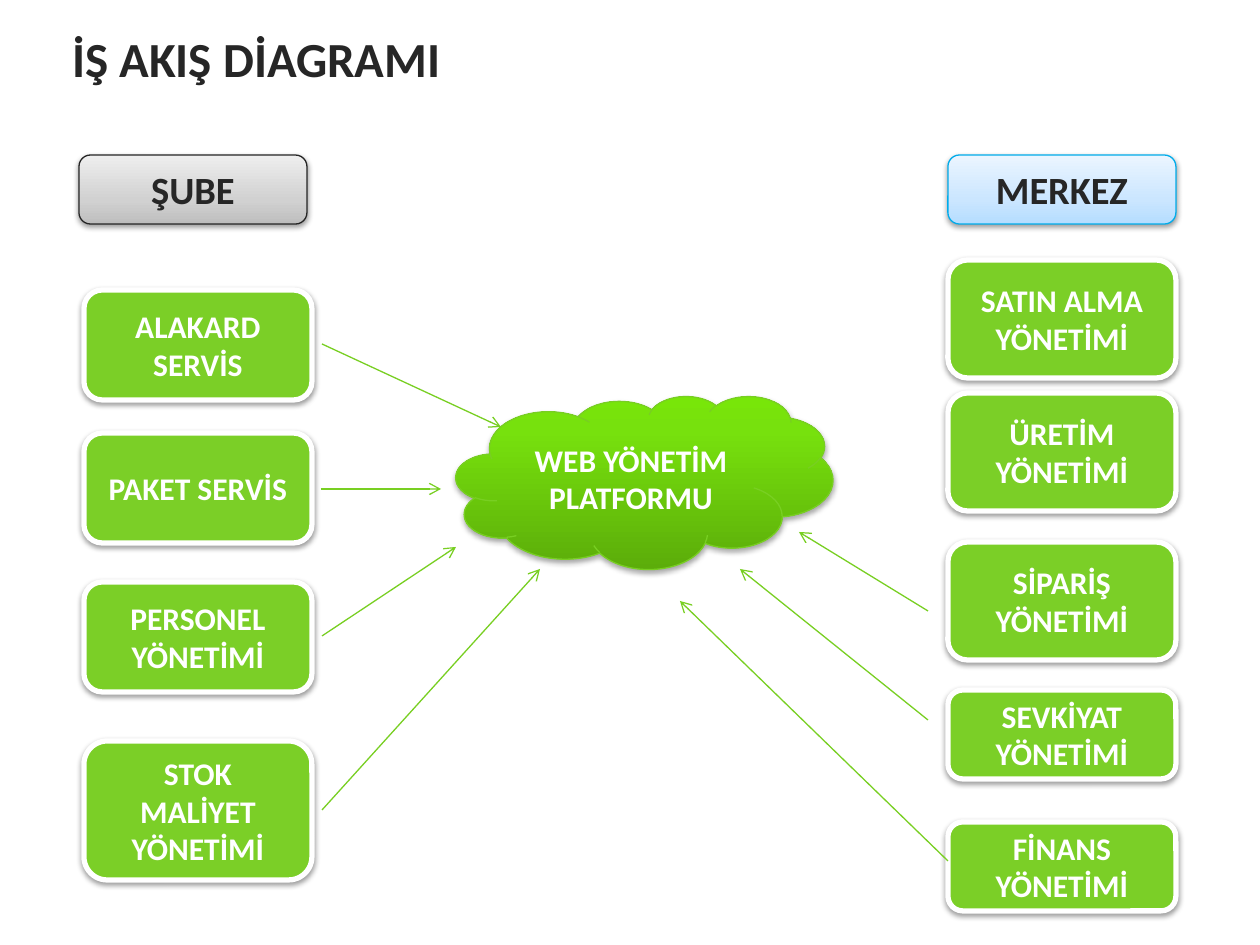
from dataclasses import dataclass

from lxml.etree import SubElement
from pptx import Presentation
from pptx.dml.color import RGBColor
from pptx.enum.shapes import MSO_CONNECTOR, MSO_SHAPE
from pptx.enum.text import MSO_ANCHOR, PP_ALIGN
from pptx.oxml.ns import qn
from pptx.util import Emu, Pt


@dataclass(frozen=True)
class Theme:
    """Colours, type sizes and line widths of the slide."""

    font: str = "Calibri"
    dark: str = "262626"
    white: str = "FFFFFF"
    green: str = "7BCF27"
    arrow: str = "78CF22"
    branch_line: str = "252525"
    centre_line: str = "00ACEB"
    branch_stops: tuple = ((0, "BEBEBE"), (35, "D1D1D1"), (100, "EEEEEE"))
    centre_stops: tuple = ((0, "B5DDFF"), (35, "CBE6FF"), (100, "EBF5FF"))
    cloud_stops: tuple = ((0, "5CAD0A"), (80, "77E10D"), (100, "78E609"))
    title_size: int = 28
    header_size: int = 22
    body_size: int = 18
    thin: float = 0.75
    thick: float = 3


THEME = Theme()
EMU_PER_PX = 914400 / 126
COLUMN_WIDTH = 228
BRANCH_LEFT, CENTRE_LEFT = 84, 948

BRANCH_STEPS = (
    ("ALAKARD SERVİS", 290, 110),
    ("PAKET SERVİS", 433, 110),
    ("PERSONEL YÖNETİMİ", 582, 110),
    ("STOK\nMALİYET YÖNETİMİ", 741, 139),
)
CENTRE_STEPS = (
    ("SATIN ALMA YÖNETİMİ", 260, 118),
    ("ÜRETİM YÖNETİMİ", 393, 118),
    ("SİPARİŞ YÖNETİMİ", 542, 118),
    ("SEVKİYAT YÖNETİMİ", 690, 89),
    ("FİNANS YÖNETİMİ", 822, 89),
)
ARROWS = (
    (322, 810, 540, 569),
    (322, 344, 501, 427),
    (321, 489, 441, 489),
    (322, 636, 456, 547),
    (928, 720, 740, 569),
    (928, 611, 799, 532),
    (948, 861, 680, 601),
)


def px(*lengths):
    """Turn pixel lengths into EMU."""
    return [Emu(round(length * EMU_PER_PX)) for length in lengths]


def write_text(shape, text, size, color, alignment):
    """Fill a shape with one bold, vertically centred paragraph."""
    frame = shape.text_frame
    frame.word_wrap = True
    frame.vertical_anchor = MSO_ANCHOR.MIDDLE
    paragraph = frame.paragraphs[0]
    paragraph.alignment = alignment
    for index, line in enumerate(text.split("\n")):
        if index:
            paragraph.add_line_break()
        run = paragraph.add_run()
        run.text = line
        run.font.name = THEME.font
        run.font.size = Pt(size)
        run.font.bold = True
        run.font.color.rgb = RGBColor.from_string(color)


def set_gradient(shape, stops):
    """Apply a gradient that runs from bottom to top."""
    shape.fill.gradient()
    shape.fill.gradient_angle = 90
    stop_list = shape.fill._xPr.find(qn("a:gradFill")).find(qn("a:gsLst"))
    for stop in list(stop_list):
        stop_list.remove(stop)
    for position, color in stops:
        stop = SubElement(stop_list, qn("a:gs"), pos=str(position * 1000))
        SubElement(stop, qn("a:srgbClr"), val=color)


def set_shadow(shape, opacity, distance):
    """Give a shape a soft black shadow straight below it."""
    shape.shadow.inherit = False
    effects = shape._element.spPr.find(qn("a:effectLst"))
    shadow = SubElement(
        effects, qn("a:outerShdw"), blurRad="40000", dist=str(distance),
        dir="5400000", rotWithShape="0",
    )
    color = SubElement(shadow, qn("a:srgbClr"), val="000000")
    SubElement(color, qn("a:alpha"), val=str(opacity * 1000))


def add_title(slide, text):
    """Add the slide title."""
    shape = slide.shapes.add_textbox(*px(60, 10, 1158, 95))
    write_text(shape, text, THEME.title_size, THEME.dark, PP_ALIGN.LEFT)


def add_block(slide, kind, box, text, size, color, line, width):
    """Add an outlined preset shape with centred text."""
    shape = slide.shapes.add_shape(kind, *px(*box))
    shape.line.color.rgb = RGBColor.from_string(line)
    shape.line.width = Pt(width)
    write_text(shape, text, size, color, PP_ALIGN.CENTER)
    return shape


def add_header(slide, left, text, stops, line):
    """Add a gradient column header."""
    shape = add_block(
        slide, MSO_SHAPE.ROUNDED_RECTANGLE, (left, 155, COLUMN_WIDTH, 69),
        text, THEME.header_size, THEME.dark, line, THEME.thin,
    )
    set_gradient(shape, stops)
    set_shadow(shape, 38, 20000)


def add_step(slide, left, text, top, height):
    """Add a green process box."""
    shape = add_block(
        slide, MSO_SHAPE.ROUNDED_RECTANGLE, (left, top, COLUMN_WIDTH, height),
        text, THEME.body_size, THEME.white, THEME.white, THEME.thick,
    )
    shape.fill.solid()
    shape.fill.fore_color.rgb = RGBColor.from_string(THEME.green)
    set_shadow(shape, 38, 20000)


def add_cloud(slide, text):
    """Add the central platform cloud."""
    shape = add_block(
        slide, MSO_SHAPE.CLOUD, (456, 396, 377, 173), text,
        THEME.body_size, THEME.white, THEME.arrow, THEME.thin,
    )
    set_gradient(shape, THEME.cloud_stops)
    set_shadow(shape, 35, 23000)


def add_arrow(slide, ends):
    """Add a thin arrow with an open head at its end."""
    arrow = slide.shapes.add_connector(MSO_CONNECTOR.STRAIGHT, *px(*ends))
    arrow.line.color.rgb = RGBColor.from_string(THEME.arrow)
    arrow.line.width = Pt(THEME.thin)
    properties = arrow._element.spPr
    SubElement(properties.find(qn("a:ln")), qn("a:tailEnd"), type="arrow")
    SubElement(properties, qn("a:effectLst"))


def main():
    """Build and save the workflow slide."""
    presentation = Presentation()
    presentation.slide_width, presentation.slide_height = px(1260, 945)
    slide = presentation.slides.add_slide(presentation.slide_layouts[6])
    add_title(slide, "İŞ AKIŞ DİAGRAMI")
    add_header(slide, 79, "ŞUBE", THEME.branch_stops, THEME.branch_line)
    add_header(slide, CENTRE_LEFT, "MERKEZ", THEME.centre_stops, THEME.centre_line)
    for left, steps in ((BRANCH_LEFT, BRANCH_STEPS), (CENTRE_LEFT, CENTRE_STEPS)):
        for step in steps:
            add_step(slide, left, *step)
    add_cloud(slide, "WEB YÖNETİM PLATFORMU")
    for ends in ARROWS:
        add_arrow(slide, ends)
    presentation.save("out.pptx")


if __name__ == "__main__":
    main()
